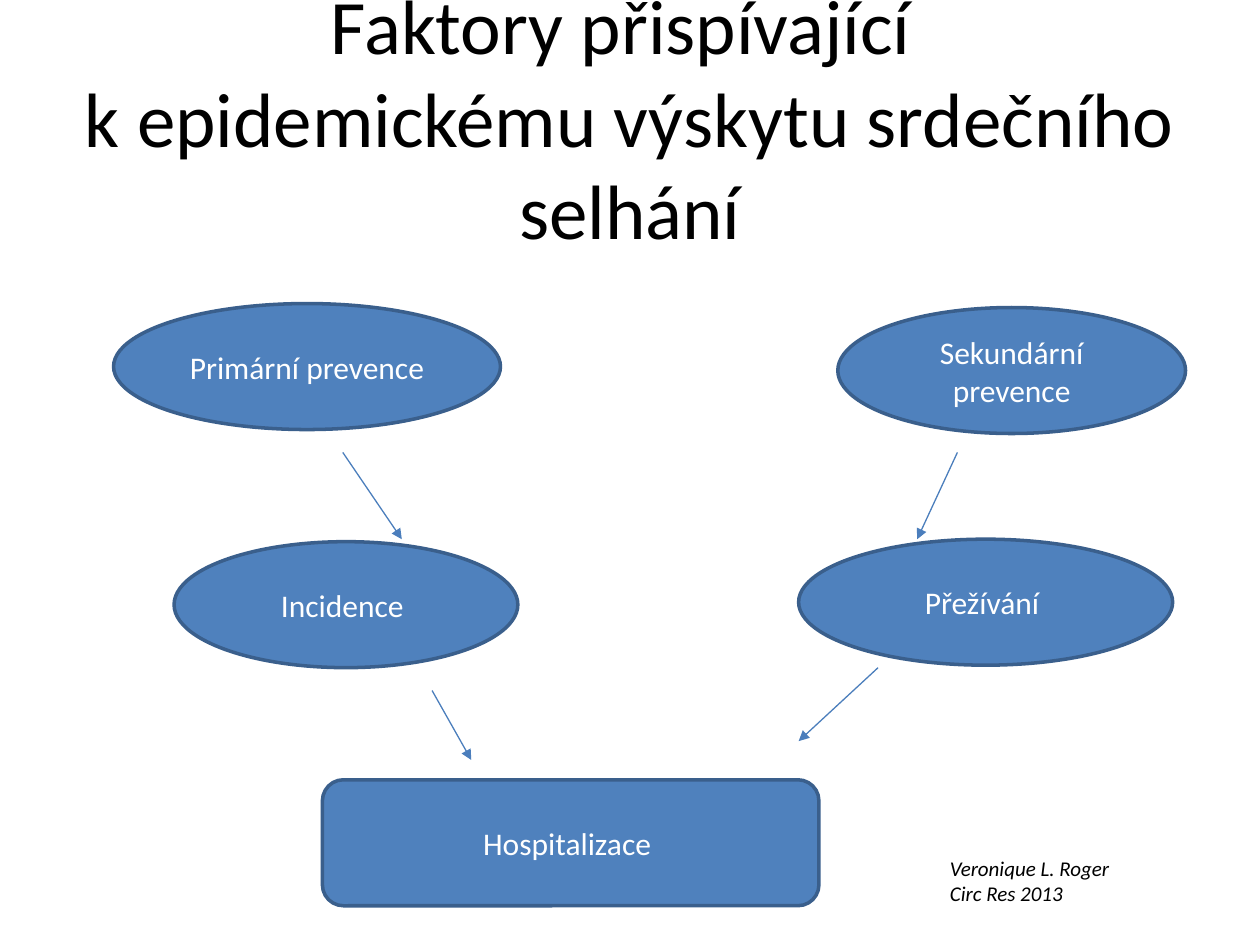
from dataclasses import dataclass

from lxml.etree import SubElement
from pptx import Presentation
from pptx.dml.color import RGBColor
from pptx.enum.shapes import MSO_CONNECTOR, MSO_SHAPE
from pptx.enum.text import MSO_ANCHOR, PP_ALIGN
from pptx.oxml.ns import qn
from pptx.util import Cm, Pt


@dataclass(frozen=True)
class Theme:
    """Colours, font and type sizes of the deck."""
    font: str = "Calibri"
    ink: RGBColor = RGBColor(0x00, 0x00, 0x00)
    light: RGBColor = RGBColor(0xFF, 0xFF, 0xFF)
    fill: RGBColor = RGBColor(0x4F, 0x81, 0xBD)
    outline: RGBColor = RGBColor(0x3A, 0x5F, 0x8C)
    arrow: RGBColor = RGBColor(0x4B, 0x7E, 0xBC)
    title: Pt = Pt(44)
    label: Pt = Pt(18)
    citation: Pt = Pt(12)


@dataclass(frozen=True)
class Box:
    """A region of the page in centimetres."""
    left: float
    top: float
    width: float
    height: float

    def inner(self, left, top, width, height):
        """Return the lengths of a part placed relative to this box."""
        return Cm(self.left + left), Cm(self.top + top), Cm(width), Cm(height)

    def point(self, left, top):
        """Return a point placed relative to this box."""
        return Cm(self.left + left), Cm(self.top + top)


THEME = Theme()
NODE_HEIGHT = 2.54
NODES = [
    ("Primární prevence", MSO_SHAPE.OVAL, 0, 0, 7.8),
    ("Sekundární prevence", MSO_SHAPE.OVAL, 14.6, 0.08, 7.01),
    ("Incidence ", MSO_SHAPE.OVAL, 1.22, 4.8, 6.93),
    ("Přežívání ", MSO_SHAPE.OVAL, 13.81, 4.75, 7.54),
    ("Hospitalizace ", MSO_SHAPE.ROUNDED_RECTANGLE, 4.21, 9.6, 10.01),
]
ARROWS = [
    ((4.62, 3), (5.81, 4.75)),
    ((6.42, 7.8), (7.21, 9.2)),
    ((17.01, 3), (16.2, 4.75)),
    ((15.41, 7.34), (13.81, 8.82)),
]


def write(frame, lines, align, anchor, **font_format):
    """Fill a text frame with one formatted paragraph per line."""
    frame.word_wrap = True
    frame.vertical_anchor = anchor
    frame.text = "\n".join(lines)
    for para in frame.paragraphs:
        para.alignment = align
        for span in para.runs:
            for name, value in {"name": THEME.font, **font_format}.items():
                if name == "color":
                    span.font.color.rgb = value
                else:
                    setattr(span.font, name, value)


def add_text(page, box, lines, align, anchor, **font_format):
    """Place a text box that fills the given box."""
    area = page.shapes.add_textbox(*box.inner(0, 0, box.width, box.height))
    write(area.text_frame, lines, align, anchor, **font_format)


def add_title(page, box):
    """Place the slide title."""
    title = "Faktory přispívající \vk epidemickému výskytu srdečního selhání"
    add_text(page, box, [title], PP_ALIGN.CENTER, MSO_ANCHOR.MIDDLE,
             size=THEME.title, color=THEME.ink)


def add_citation(page, box):
    """Place the citation."""
    add_text(page, box, ["Veronique L. Roger", "Circ Res 2013"],
             PP_ALIGN.LEFT, MSO_ANCHOR.TOP,
             size=THEME.citation, color=THEME.ink, italic=True)


def add_node(page, box, label, kind, left, top, width):
    """Place one labelled factor of the diagram."""
    node = page.shapes.add_shape(kind, *box.inner(left, top, width, NODE_HEIGHT))
    node.shadow.inherit = False
    node.fill.solid()
    node.fill.fore_color.rgb = THEME.fill
    node.line.color.rgb = THEME.outline
    node.line.width = Pt(2)
    write(node.text_frame, [label], PP_ALIGN.CENTER, MSO_ANCHOR.MIDDLE,
          size=THEME.label, color=THEME.light)


def add_arrow(page, box, start, end):
    """Place one arrow of the diagram."""
    arrow = page.shapes.add_connector(
        MSO_CONNECTOR.STRAIGHT, *box.point(*start), *box.point(*end))
    arrow.line.color.rgb = THEME.arrow
    arrow.line.width = Pt(0.75)
    SubElement(arrow.line._get_or_add_ln(), qn("a:tailEnd"), type="triangle")
    SubElement(arrow._element.spPr, qn("a:effectLst"))


def add_diagram(page, box):
    """Place the factors and the arrows between them."""
    for node in NODES:
        add_node(page, box, *node)
    for start, end in ARROWS:
        add_arrow(page, box, start, end)


def main():
    """Build the deck and save it."""
    deck = Presentation()
    deck.slide_width, deck.slide_height = Cm(25.4), Cm(19.05)
    page = deck.slides.add_slide(deck.slide_layouts[6])
    add_title(page, Box(1.27, 0.76, 22.86, 3.18))
    add_citation(page, Box(18.9, 17.12, 5.41, 1.27))
    add_diagram(page, Box(2.29, 6.12, 21.61, 12.14))
    deck.save("out.pptx")


if __name__ == "__main__":
    main()
